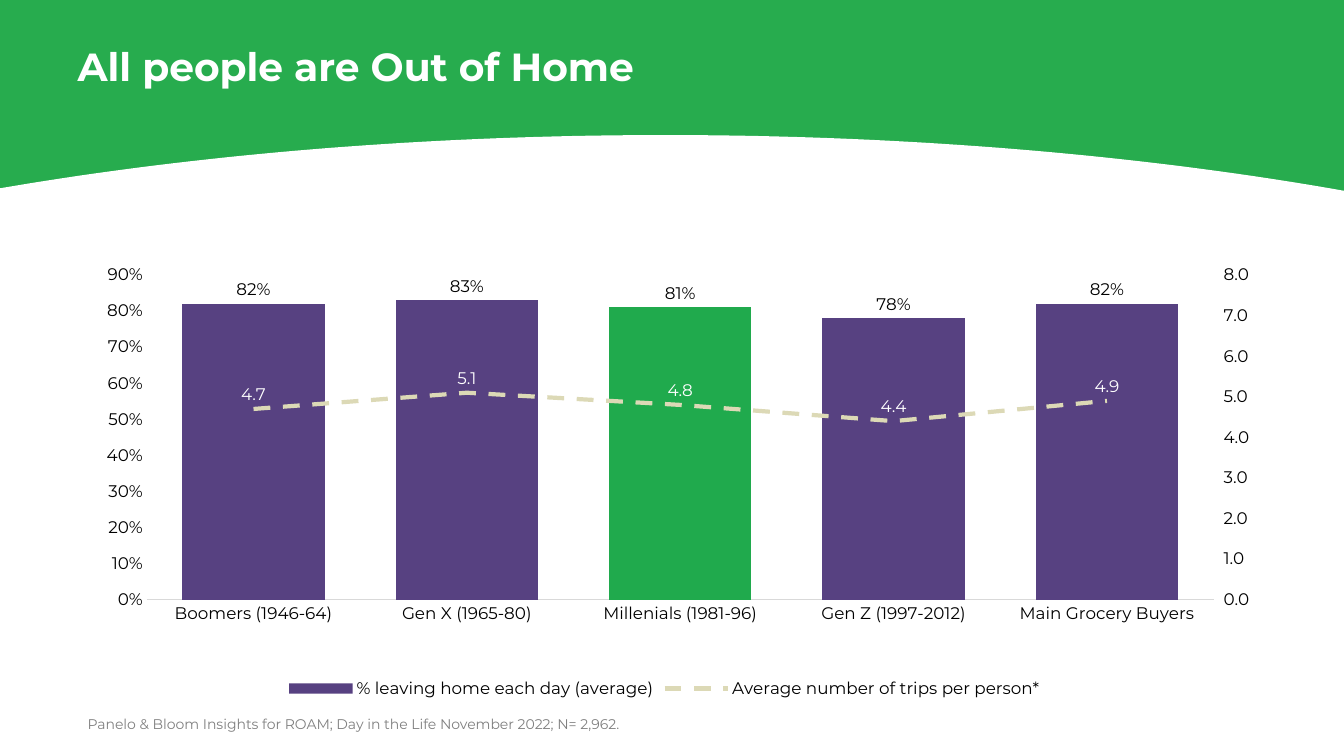
from copy import deepcopy
from lxml import etree
from pptx import Presentation
from pptx.chart.axis import CategoryAxis as CatAxis, ValueAxis as ValAxis
from pptx.chart.data import CategoryChartData as ChartData
from pptx.dml.color import RGBColor as RGB
from pptx.enum.chart import XL_CHART_TYPE as KIND, XL_LABEL_POSITION as SPOT
from pptx.enum.chart import XL_LEGEND_POSITION as SIDE, XL_TICK_MARK as TICK
from pptx.enum.dml import MSO_LINE as DASH
from pptx.oxml import parse_xml
from pptx.oxml.ns import nsdecls, qn
from pptx.util import Pt

TITLE = "All people are Out of Home"
NOTE = "Panelo & Bloom Insights for ROAM; Day in the Life November 2022; N= 2,962."
GROUPS = ["Boomers (1946-64)", "Gen X (1965-80)", "Millenials (1981-96)",
          "Gen Z (1997-2012)", "Main Grocery Buyers"]
LEAVE = ("% leaving home each day (average)", [0.82, 0.83, 0.81, 0.78, 0.82])
TRIPS = ("Average number of trips per person*", [4.7, 5.1, 4.8, 4.4, 4.9])
HUES = {"back": "27AC4E", "white": "FFFFFF", "black": "000000", "gray": "808080",
        "rule": "D9D9D9", "bar": "574181", "star": "20AA4D", "trip": "DCD9B6"}
FONT = "Montserrat"
SCALE = 9144
SIZE = (1333, 750)
BOXES = {"title": (77, 37, 749, 73), "chart": (77, 221, 1164, 476),
         "note": (77, 705, 947, 27)}
ARCS = [((-29, 192), (168, 156), (405, 134), (660, 134)),
        ((660, 134), (914, 134), (1151, 156), (1348, 192))]
EDGE = [(1367, 196), (1367, 747), (1355, 750), (-31, 750), (-31, 192)]
PLOT = {"x": 0.059, "y": 0.109, "w": 0.909, "h": 0.677}
STEPS = 40


def px(*nums):
    return [round(n * SCALE) for n in nums]


def hue(name):
    return RGB.from_string(HUES[name])


def style(font, size, name, bold=False):
    font.name, font.size, font.bold = FONT, Pt(size), bold
    font.color.rgb = hue(name)


def paint(fill, name):
    fill.solid()
    fill.fore_color.rgb = hue(name)


def curve(arc):
    for i in range(STEPS + 1):
        t = i / STEPS
        part = ((1 - t) ** 3, 3 * t * (1 - t) ** 2, 3 * t * t * (1 - t), t ** 3)
        yield tuple(sum(k * p[axis] for k, p in zip(part, arc)) for axis in (0, 1))


def write(slide, key, text, size, name, bold=False, inset=None):
    frame = slide.shapes.add_textbox(*px(*BOXES[key])).text_frame
    frame.word_wrap = True
    if inset is not None:
        frame.margin_left = frame.margin_right = inset
        frame.margin_top = frame.margin_bottom = inset
    frame.text = text
    style(frame.paragraphs[0].runs[0].font, size, name, bold)
    return frame


def draw_arch(slide):
    dots = [dot for arc in ARCS for dot in curve(arc)] + EDGE
    pen = slide.shapes.build_freeform(*px(*dots[0]), scale=1.0)
    pen.add_line_segments([tuple(px(*dot)) for dot in dots[1:]], close=True)
    arch = pen.convert_to_shape()
    arch.shadow.inherit = False
    paint(arch.fill, "white")
    arch.line.fill.background()


def set_axis(axis, top, unit, code, tick):
    axis.minimum_scale, axis.maximum_scale, axis.major_unit = 0, top, unit
    axis.major_tick_mark = tick
    axis.tick_labels.number_format = code
    axis.tick_labels.number_format_is_linked = False


def set_labels(series, code, spot, name):
    tags = series.data_labels
    tags.show_value, tags.position = True, spot
    tags.number_format, tags.number_format_is_linked = code, False
    style(tags.font, 12, name)


def set_val(node, tag, value):
    node.find(qn(tag)).set("val", value)


def add_line(chart, series):
    area = chart._chartSpace.chart.plotArea
    ser = series._element
    ser.getparent().remove(ser)
    for old in ser.findall(qn("c:invertIfNegative")):
        ser.remove(old)
    ser.find(qn("c:spPr")).addnext(
        parse_xml(f'<c:marker {nsdecls("c")}><c:symbol val="none"/></c:marker>'))
    etree.SubElement(ser, qn("c:smooth")).set("val", "0")
    group = parse_xml(
        f'<c:lineChart {nsdecls("c")}><c:grouping val="standard"/>'
        '<c:varyColors val="0"/><c:marker val="1"/>'
        '<c:axId val="11"/><c:axId val="12"/></c:lineChart>')
    group.insert(2, ser)
    area.find(qn("c:barChart")).addnext(group)
    base, left = area.find(qn("c:catAx")), area.find(qn("c:valAx"))
    low, right = deepcopy(base), deepcopy(left)
    for node, own, other in ((low, "11", "12"), (right, "12", "11")):
        set_val(node, "c:axId", own)
        set_val(node, "c:crossAx", other)
    set_val(right, "c:axPos", "r")
    set_val(right, "c:crosses", "max")
    left.addnext(right)
    right.addnext(low)
    CatAxis(low).visible = False
    set_axis(ValAxis(right), 8, 1, "0.0", TICK.OUTSIDE)


def set_plot(chart):
    area = chart._chartSpace.chart.plotArea
    for old in area.findall(qn("c:layout")):
        area.remove(old)
    modes = "".join(f'<c:{k}Mode val="edge"/>' for k in "xy")
    sizes = "".join(f'<c:{k} val="{v}"/>' for k, v in PLOT.items())
    area.insert(0, parse_xml(
        f'<c:layout {nsdecls("c")}><c:manualLayout><c:layoutTarget val="inner"/>'
        f'{modes}{sizes}</c:manualLayout></c:layout>'))


def draw_chart(slide):
    data = ChartData()
    data.categories = GROUPS
    for name, vals in (LEAVE, TRIPS):
        data.add_series(name, vals)
    chart = slide.shapes.add_chart(
        KIND.COLUMN_CLUSTERED, *px(*BOXES["chart"]), data).chart
    style(chart.font, 10, "black")
    chart.has_title = False
    chart.has_legend = True
    chart.legend.position = SIDE.BOTTOM
    chart.legend.include_in_layout = False
    style(chart.legend.font, 12, "black")
    base, left = chart.category_axis, chart.value_axis
    for axis in (base, left):
        axis.has_major_gridlines = False
        axis.minor_tick_mark = TICK.NONE
        style(axis.tick_labels.font, 12, "black")
    base.major_tick_mark = TICK.NONE
    base.format.line.color.rgb = hue("rule")
    base.format.line.width = Pt(0.75)
    left.format.line.fill.background()
    set_axis(left, 0.9, 0.1, "0%", TICK.NONE)
    plot = chart.plots[0]
    plot.gap_width, plot.overlap, plot.vary_by_categories = 50, -27, False
    leave, trips = plot.series
    paint(leave.format.fill, "bar")
    paint(leave.points[2].format.fill, "star")
    set_labels(leave, "0%", SPOT.OUTSIDE_END, "black")
    line = trips.format.line
    line.color.rgb, line.width, line.dash_style = hue("trip"), Pt(3), DASH.DASH
    set_labels(trips, "0.0", SPOT.ABOVE, "white")
    add_line(chart, trips)
    set_plot(chart)


def main():
    deck = Presentation()
    deck.slide_width, deck.slide_height = px(*SIZE)
    slide = deck.slides.add_slide(deck.slide_layouts[6])
    paint(slide.background.fill, "back")
    draw_arch(slide)
    title = write(slide, "title", TITLE, 28, "white", True, 0)
    title.paragraphs[0].line_spacing = 1.1
    draw_chart(slide)
    write(slide, "note", NOTE, 10, "gray")
    deck.save("out.pptx")


if __name__ == "__main__":
    main()
